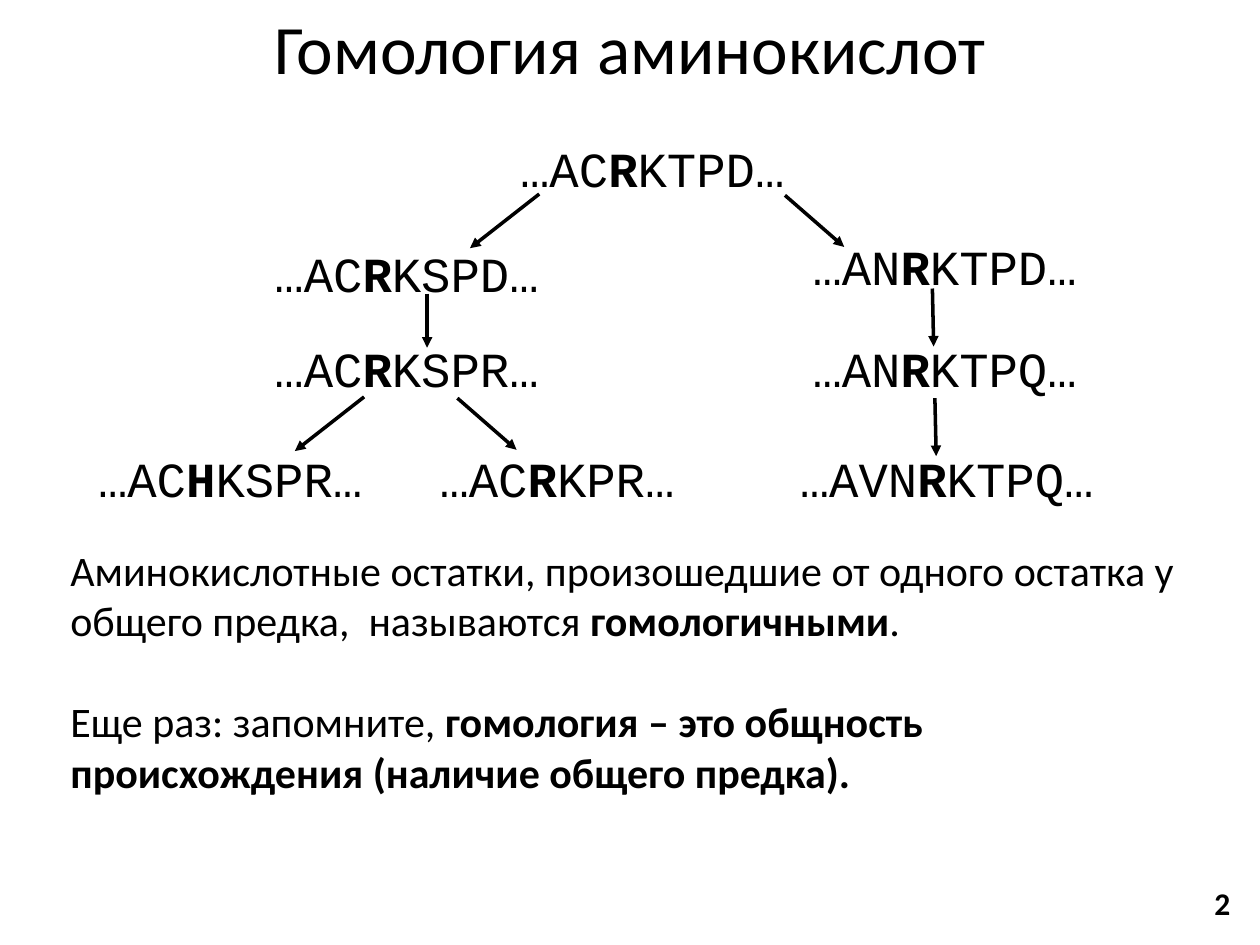
from lxml.etree import SubElement
from pptx import Presentation
from pptx.dml.color import RGBColor
from pptx.enum.shapes import MSO_CONNECTOR
from pptx.enum.text import MSO_ANCHOR, PP_ALIGN
from pptx.oxml.ns import qn
from pptx.util import Inches, Pt

THEME = {
    "ink": RGBColor(0, 0, 0),
    "font": "Calibri", "mono": "Courier New",
    "title": Pt(39.6), "sequence": Pt(28), "body": Pt(24), "number": Pt(18),
    "arrow": Pt(2), "gap": Pt(29),
}


def add_runs(p, parts, size, font=THEME["font"]):
    """Fill a paragraph with (text, bold) parts."""
    for text, bold in parts:
        r = p.add_run()
        r.text = text
        r.font.name, r.font.size, r.font.bold = font, size, bold
        r.font.color.rgb = THEME["ink"]


def add_box(s, left, top, width, height, wrap=False):
    sp = s.shapes.add_textbox(Inches(left), Inches(top), Inches(width), Inches(height))
    sp.text_frame.word_wrap = wrap
    return sp.text_frame


prs = Presentation()
prs.slide_width, prs.slide_height = Inches(10), Inches(7.5)
s = prs.slides.add_slide(prs.slide_layouts[5])

# Title
title = s.shapes.title
title.left, title.top, title.width, title.height = 0, 0, Inches(10), Inches(0.75)
tf = title.text_frame
tf.vertical_anchor = MSO_ANCHOR.MIDDLE
tf.paragraphs[0].alignment = PP_ALIGN.CENTER
add_runs(tf.paragraphs[0], [("Гомология аминокислот", False)], THEME["title"])

# Sequences of the tree: left, top, width, start, homologous residue, end
sequences = [
    (4.03, 1.05, 2.32, "…AC", "R", "KTPD…"),
    (2.08, 1.88, 2.32, "…AC", "R", "KSPD…"),
    (2.08, 2.64, 2.32, "…AC", "R", "KSPR…"),
    (0.68, 3.51, 2.32, "…AC", "H", "KSPR…"),
    (3.39, 3.51, 2.08, "…AC", "R", "KPR…"),
    (6.35, 1.83, 2.32, "…AN", "R", "KTPD…"),
    (6.35, 2.64, 2.32, "…AN", "R", "KTPQ…"),
    (6.25, 3.51, 2.55, "…AVN", "R", "KTPQ…"),
]
for left, top, width, start, residue, end in sequences:
    tf = add_box(s, left, top, width, 0.57)
    add_runs(tf.paragraphs[0], [(start, False), (residue, True), (end, False)],
             THEME["sequence"], THEME["mono"])

# Arrows from ancestor to descendant: x1, y1, x2, y2
arrows = [
    (4.28, 1.54, 3.73, 1.97),
    (3.39, 2.33, 3.39, 2.76),
    (2.89, 3.15, 2.34, 3.58),
    (3.63, 3.16, 4.10, 3.57),
    (6.23, 1.55, 6.70, 1.96),
    (7.40, 2.29, 7.41, 2.75),
    (7.42, 3.16, 7.43, 3.62),
]
for ends in arrows:
    arrow = s.shapes.add_connector(MSO_CONNECTOR.STRAIGHT, *map(Inches, ends))
    arrow.line.color.rgb = THEME["ink"]
    arrow.line.width = THEME["arrow"]
    SubElement(arrow.line._get_or_add_ln(), qn("a:tailEnd"), type="triangle")
    SubElement(arrow._element.spPr, qn("a:effectLst"))

# Slide number
tf = add_box(s, 9.54, 6.97, 0.33, 0.4)
add_runs(tf.paragraphs[0], [("2", True)], THEME["number"])

# Definition and reminder
tf = add_box(s, 0.46, 4.27, 9.09, 2.52, wrap=True)
add_runs(tf.paragraphs[0], [
    ("Аминокислотные остатки, произошедшие от одного остатка у общего предка,  называются ", False),
    ("гомологичными", True),
    (".", False),
], THEME["body"])
p = tf.add_paragraph()
p.space_before = THEME["gap"]
add_runs(p, [
    ("Еще раз: запомните, ", False),
    ("гомология – это общность происхождения (наличие общего предка).", True),
], THEME["body"])

prs.save("out.pptx")
